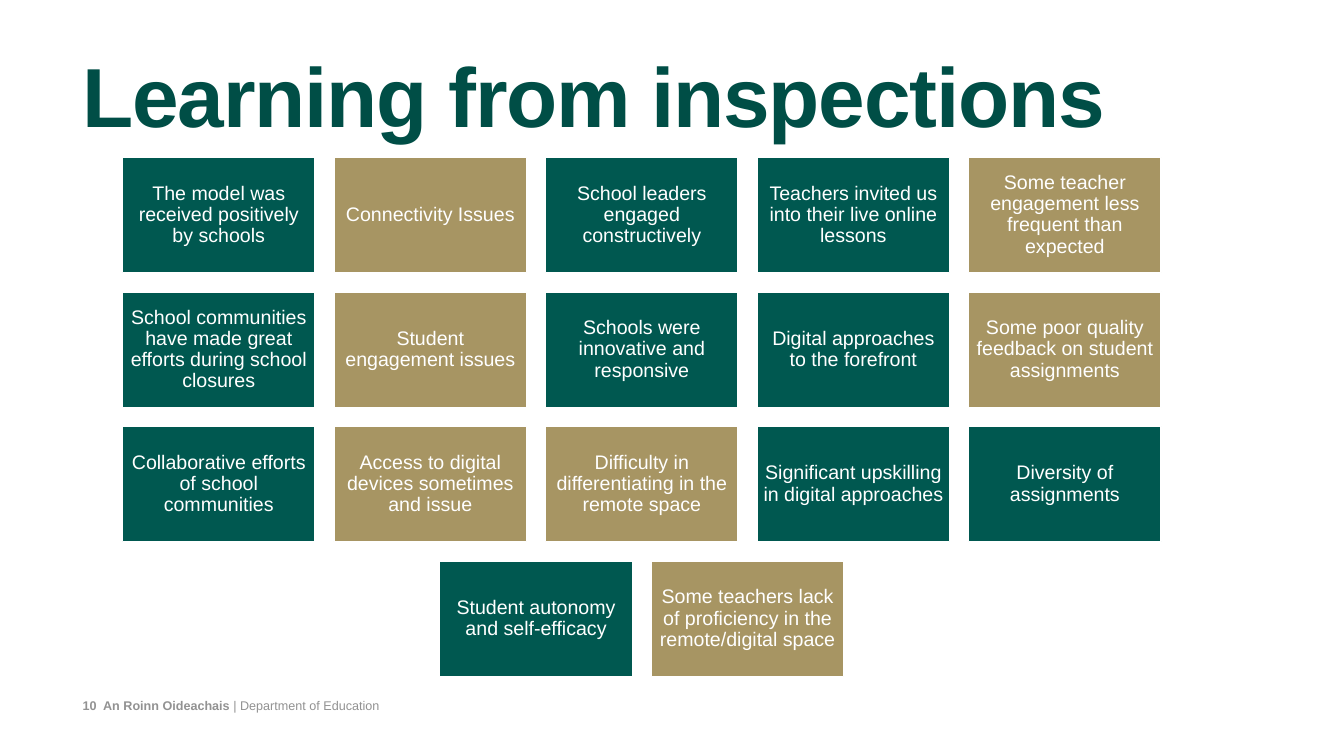
import pptx
import pptx.util
import pptx.dml.color
import pptx.enum.shapes
import pptx.enum.text

Inches, Pt = pptx.util.Inches, pptx.util.Pt
PP_ALIGN = pptx.enum.text.PP_ALIGN
MSO_ANCHOR = pptx.enum.text.MSO_ANCHOR

COLORS = {"title": "004E46", "green": "005850", "gold": "A79563",
          "white": "FFFFFF", "grey": "929292"}

FINDINGS = [
    [("The model was received positively by schools", "green"),
     ("Connectivity Issues", "gold"),
     ("School leaders engaged constructively", "green"),
     ("Teachers invited us into their live online lessons", "green"),
     ("Some teacher engagement less frequent than expected", "gold")],
    [("School communities have made great efforts during school closures", "green"),
     ("Student engagement issues", "gold"),
     ("Schools were innovative and responsive", "green"),
     ("Digital approaches to the forefront", "green"),
     ("Some poor quality feedback on student assignments", "gold")],
    [("Collaborative efforts of school communities", "green"),
     ("Access to digital devices sometimes and issue", "gold"),
     ("Difficulty in differentiating in the remote space", "gold"),
     ("Significant upskilling in digital approaches", "green"),
     ("Diversity of assignments", "green")],
    [("Student autonomy and self-efficacy", "green"),
     ("Some teachers lack of proficiency in the remote/digital space", "gold")],
]


def rgb(name):
    """Return the named colour."""
    return pptx.dml.color.RGBColor.from_string(COLORS[name])


def set_insets(tf, left, top, right, bottom):
    """Set the text frame margins in inches."""
    tf.margin_left, tf.margin_top = Inches(left), Inches(top)
    tf.margin_right, tf.margin_bottom = Inches(right), Inches(bottom)


def set_font(p, size, color, bold=False):
    """Format a whole paragraph."""
    p.font.name, p.font.size, p.font.bold = "Arial", Pt(size), bold
    p.font.color.rgb = rgb(color)


def add_title(s, left, top, width, height):
    """Place and format the slide title."""
    sp = s.shapes.title
    sp.left, sp.top = Inches(left), Inches(top)
    sp.width, sp.height = Inches(width), Inches(height)
    tf = sp.text_frame
    tf.text = "Learning from inspections"
    tf.auto_size = pptx.enum.text.MSO_AUTO_SIZE.NONE
    tf.vertical_anchor = MSO_ANCHOR.TOP
    set_insets(tf, 0.06, 0.23, 0.06, 0.06)
    p = tf.paragraphs[0]
    p.alignment, p.line_spacing = PP_ALIGN.LEFT, 0.8
    p.space_before = Pt(0)
    set_font(p, 119.7, "title", True)
    p.runs[0].font._element.set("spc", "-180")


def add_tile(s, left, top, width, height, text, color):
    """Add one finding as a filled rectangle."""
    sp = s.shapes.add_shape(pptx.enum.shapes.MSO_SHAPE.RECTANGLE, Inches(left),
                            Inches(top), Inches(width), Inches(height))
    sp.shadow.inherit = False
    sp.fill.solid()
    sp.fill.fore_color.rgb = rgb(color)
    sp.line.color.rgb = rgb("white")
    sp.line.width = Pt(2)
    tf = sp.text_frame
    tf.text = text
    tf.word_wrap = True
    tf.vertical_anchor = MSO_ANCHOR.MIDDLE
    set_insets(tf, 0.12, 0.12, 0.12, 0.12)
    p = tf.paragraphs[0]
    p.alignment, p.line_spacing = PP_ALIGN.CENTER, 0.9
    set_font(p, 28, "white")


def add_findings(s, left, top, width, height):
    """Lay the findings out in centred rows."""
    tile_w, tile_h = 3.82, 2.29
    step_x = (width - tile_w) / (len(FINDINGS[0]) - 1)
    step_y = (height - tile_h) / (len(FINDINGS) - 1)
    for i, row in enumerate(FINDINGS):
        row_w = (len(row) - 1) * step_x + tile_w
        x = left + (width - row_w) / 2
        for j, (text, color) in enumerate(row):
            add_tile(s, x + j * step_x, top + i * step_y, tile_w, tile_h, text, color)


def add_footer(s, left, top, width, height):
    """Add the page number and department line."""
    sp = s.shapes.add_textbox(Inches(left), Inches(top), Inches(width), Inches(height))
    tf = sp.text_frame
    tf.word_wrap = False
    tf.vertical_anchor = MSO_ANCHOR.MIDDLE
    set_insets(tf, 0.06, 0.06, 0.06, 0.06)
    p = tf.paragraphs[0]
    set_font(p, 18, "grey")
    r = p.add_run()
    r.text = "10\u00a0 An Roinn Oideachais "
    r.font.bold = True
    p.add_run().text = "| Department of Education"


def main():
    """Build and save the slide."""
    prs = pptx.Presentation()
    prs.slide_width, prs.slide_height = Inches(26.67), Inches(15)
    s = prs.slides.add_slide(prs.slide_layouts[5])
    add_title(s, 1.58, 1.03, 21.82, 2.5)
    add_findings(s, 2.43, 3.12, 20.61, 10.3)
    add_footer(s, 1.58, 13.79, 6.17, 0.42)
    prs.save("out.pptx")


if __name__ == "__main__":
    main()
